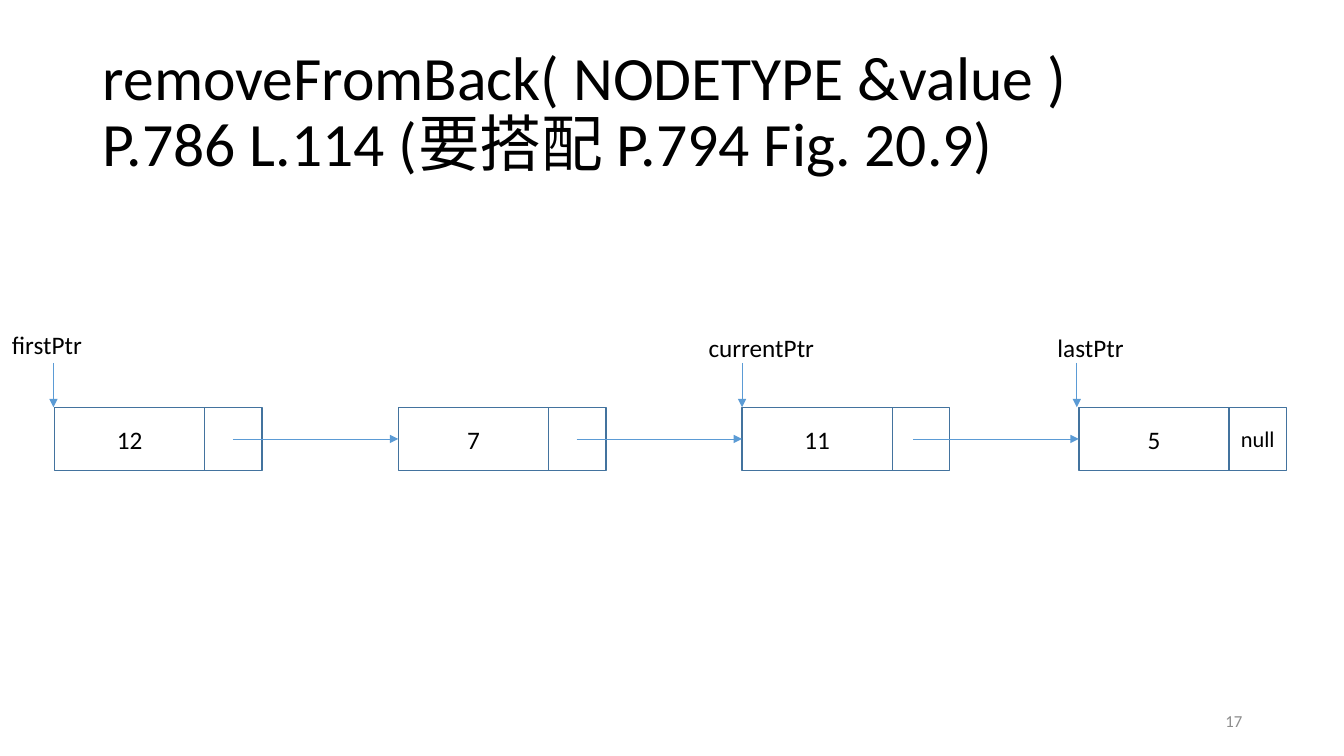
import pptx
import pptx.dml.color
import pptx.enum.shapes
import pptx.enum.text
import pptx.util
from pptx.oxml.ns import qn
from pptx.util import Inches

COLORS = {"text": "000000", "number": "8C8C8C", "outline": "43739E", "arrow": "5B9BD5"}
ALIGN = pptx.enum.text.PP_ALIGN
MIDDLE = pptx.enum.text.MSO_ANCHOR.MIDDLE

NODE_TOP, NODE_HEIGHT = 4.04, 0.63
VALUE_WIDTH, LINK_WIDTH = 1.49, 0.57
POINTER_TOP = 3.6

# left, value, link text, start of the arrow within the link cell
NODES = [
    (0.54, "12", "", 0.28),
    (3.95, "7", "", 0.28),
    (7.36, "11", "", 0.21),
    (10.7, "5", "null", None),
]
# name, label left, label top, label width, arrow x
POINTERS = [
    ("firstPtr", 0.02, 3.22, 1.03, 0.53),
    ("currentPtr", 6.93, 3.25, 1.27, 7.36),
    ("lastPtr", 10.39, 3.25, 1.03, 10.68),
]


def rgb(name):
    return pptx.dml.color.RGBColor.from_string(COLORS[name])


def write(shape, text, size, color="text", align=ALIGN.LEFT, line_spacing=1.0, **frame_format):
    frame = shape.text_frame
    frame.text = text
    for name, value in {"word_wrap": True, **frame_format}.items():
        setattr(frame, name, value)
    paragraph = frame.paragraphs[0]
    paragraph.alignment = align
    paragraph.line_spacing = line_spacing
    for run in paragraph.runs:
        font_format = {"name": "Calibri", "size": pptx.util.Pt(size), "bold": False}
        for name, value in font_format.items():
            setattr(run.font, name, value)
        run.font.color.rgb = rgb(color)


def add_label(slide, text, left, top, width, height, size, **text_format):
    box = slide.shapes.add_textbox(Inches(left), Inches(top), Inches(width), Inches(height))
    write(box, text, size, **text_format)


def add_cell(slide, text, left, width, size):
    cell = slide.shapes.add_shape(
        pptx.enum.shapes.MSO_SHAPE.RECTANGLE,
        Inches(left), Inches(NODE_TOP), Inches(width), Inches(NODE_HEIGHT),
    )
    cell.shadow.inherit = False
    cell.fill.background()
    cell.line.color.rgb = rgb("outline")
    cell.line.width = pptx.util.Pt(1)
    if text:
        write(cell, text, size, align=ALIGN.CENTER, vertical_anchor=MIDDLE)
    return cell


def add_arrow(slide, start_x, start_y, end_x, end_y):
    arrow = slide.shapes.add_connector(
        pptx.enum.shapes.MSO_CONNECTOR.STRAIGHT,
        Inches(start_x), Inches(start_y), Inches(end_x), Inches(end_y),
    )
    arrow.line.color.rgb = rgb("arrow")
    arrow.line.width = pptx.util.Pt(0.5)
    properties = arrow._element.spPr
    line = properties.find(qn("a:ln"))
    line.append(line.makeelement(qn("a:tailEnd"), {"type": "triangle"}))
    properties.append(properties.makeelement(qn("a:effectLst"), {}))
    return arrow


def add_title(slide, text):
    title = slide.shapes.title
    place = {"left": 0.92, "top": 0.4, "width": 11.5, "height": 1.45}
    for name, value in place.items():
        setattr(title, name, Inches(value))
    write(title, text, 44, line_spacing=0.9, vertical_anchor=MIDDLE,
          auto_size=pptx.enum.text.MSO_AUTO_SIZE.NONE)


def add_linked_list(slide):
    value_cells = []
    for left, value, link, _ in NODES:
        value_cells.append(add_cell(slide, value, left, VALUE_WIDTH, 18))
        add_cell(slide, link, left + VALUE_WIDTH, LINK_WIDTH, 16)

    middle = NODE_TOP + NODE_HEIGHT / 2
    for node, next_node, next_cell in zip(NODES, NODES[1:], value_cells[1:]):
        left, _, _, offset = node
        arrow = add_arrow(slide, left + VALUE_WIDTH + offset, middle, next_node[0], middle)
        arrow.end_connect(next_cell, 1)


def main():
    presentation = pptx.Presentation()
    presentation.slide_width = Inches(13.33)
    presentation.slide_height = Inches(7.5)
    slide = presentation.slides.add_slide(presentation.slide_layouts[5])

    add_title(slide, "removeFromBack( NODETYPE &value )\vP.786 L.114 (要搭配 P.794 Fig. 20.9)")
    add_linked_list(slide)
    for name, left, top, width, arrow_x in POINTERS:
        add_label(slide, name, left, top, width, 0.4, 18)
        add_arrow(slide, arrow_x, POINTER_TOP, arrow_x, NODE_TOP)
    add_label(slide, "17", 9.42, 6.95, 3, 0.4, 12, color="number",
              align=ALIGN.RIGHT, vertical_anchor=MIDDLE)

    presentation.save("out.pptx")


if __name__ == "__main__":
    main()
